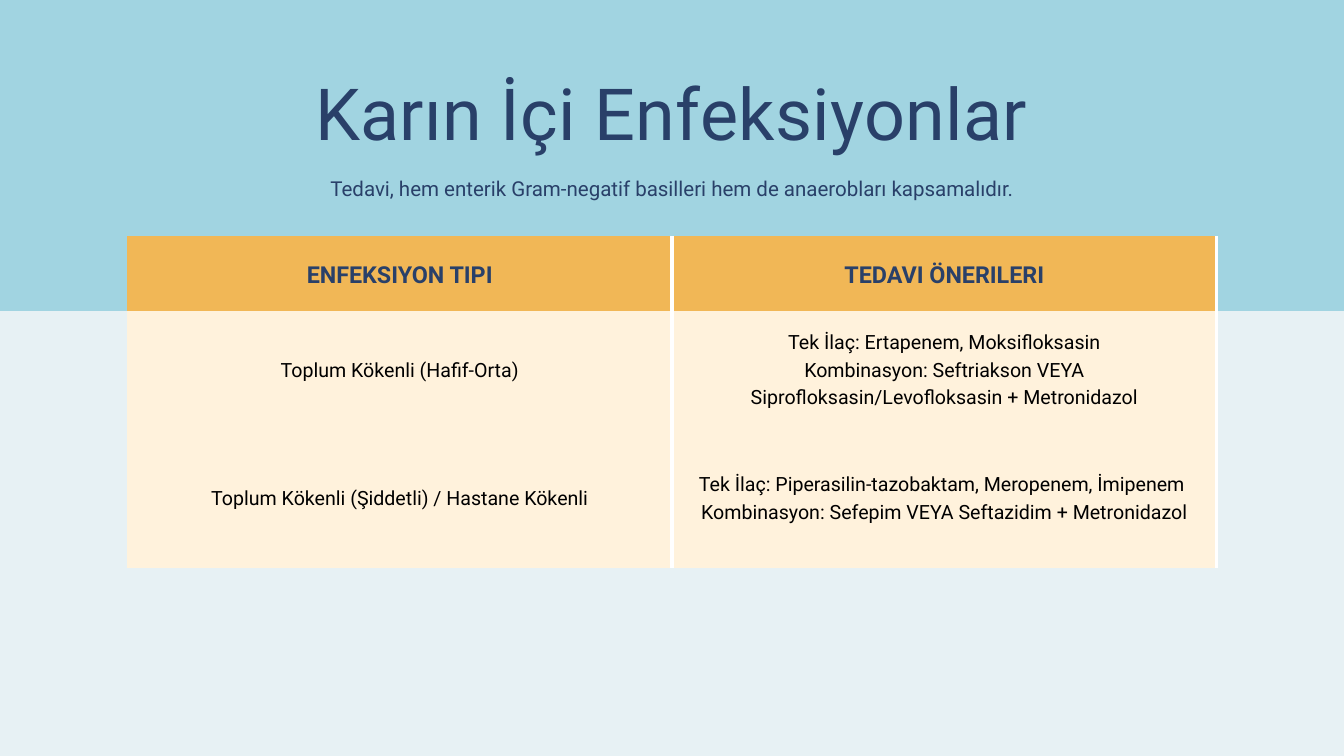
import pptx
import pptx.dml.color
import pptx.enum.shapes
import pptx.enum.text
import pptx.oxml
import pptx.oxml.ns
import pptx.util

NAVY = "294069"
BLACK = "000000"
WHITE = "FFFFFF"
SKY = "A1D4E1"
PALE_BLUE = "E7F1F4"
ORANGE = "F1B756"
CREAM = "FFF2DC"

SLIDE_WIDTH, SLIDE_HEIGHT = 1920, 1080
TABLE_LEFT, TABLE_TOP = 182, 337
COLUMN_WIDTH = 778
ROW_HEIGHTS = [107, 164, 203]
BAND_HEIGHT = TABLE_TOP + ROW_HEIGHTS[0]

TREATMENTS = [
    ["ENFEKSIYON TIPI", "TEDAVI ÖNERILERI"],
    ["Toplum Kökenli (Hafif-Orta)",
     "Tek İlaç: Ertapenem, Moksifloksasin\n"
     "Kombinasyon: Seftriakson VEYA Siprofloksasin/Levofloksasin + Metronidazol"],
    ["Toplum Kökenli (Şiddetli) / Hastane Kökenli",
     "Tek İlaç: Piperasilin-tazobaktam, Meropenem, İmipenem \n"
     "Kombinasyon: Sefepim VEYA Seftazidim + Metronidazol"],
]


def px(length):
    return pptx.util.Emu(length * 9525)


def color(value):
    return pptx.dml.color.RGBColor.from_string(value)


class SlideBuilder:
    font_name = "Roboto"
    border_width = pptx.util.Pt(3.75)

    def __init__(self, slide):
        self.slide = slide

    def background(self, fill):
        self.slide.background.fill.solid()
        self.slide.background.fill.fore_color.rgb = color(fill)

    def band(self, left, top, width, height, fill):
        """Add a plain rectangle behind everything else."""
        shape = self.slide.shapes.add_shape(
            pptx.enum.shapes.MSO_SHAPE.RECTANGLE,
            px(left), px(top), px(width), px(height))
        shape.shadow.inherit = False
        shape.fill.solid()
        shape.fill.fore_color.rgb = color(fill)
        shape.line.fill.background()
        self.slide.shapes[0].element.addprevious(shape.element)

    def format_text(self, frame, text, size, line_spacing, text_color, bold=False):
        frame.text = text
        frame.word_wrap = True
        for paragraph in frame.paragraphs:
            paragraph.alignment = pptx.enum.text.PP_ALIGN.CENTER
            paragraph.line_spacing = pptx.util.Pt(line_spacing)
            paragraph.space_before = paragraph.space_after = pptx.util.Pt(0)
            paragraph.font.name = self.font_name
            paragraph.font.size = pptx.util.Pt(size)
            paragraph.font.bold = bold
            paragraph.font.color.rgb = color(text_color)

    def placeholder(self, index, left, top, width, height, text, size,
                    line_spacing, tracking=0):
        """Fill a template placeholder; tracking is in hundredths of a point."""
        shape = self.slide.placeholders[index]
        shape.left, shape.top = px(left), px(top)
        shape.width, shape.height = px(width), px(height)
        frame = shape.text_frame
        frame.margin_left = frame.margin_right = 0
        frame.margin_top = frame.margin_bottom = 0
        frame.vertical_anchor = pptx.enum.text.MSO_ANCHOR.TOP
        frame.auto_size = pptx.enum.text.MSO_AUTO_SIZE.NONE
        self.format_text(frame, text, size, line_spacing, NAVY)
        if tracking:
            for run in frame.paragraphs[0].runs:
                run._r.get_or_add_rPr().set("spc", str(tracking))

    def cell_borders(self, cell, white_sides):
        properties = cell._tc.get_or_add_tcPr()
        namespace = pptx.oxml.ns.nsdecls("a")
        for position, side in enumerate("LRTB"):
            if side in white_sides:
                width = self.border_width
                fill = f'<a:solidFill><a:srgbClr val="{WHITE}"/></a:solidFill>'
            else:
                width, fill = 0, "<a:noFill/>"
            border = pptx.oxml.parse_xml(
                f'<a:ln{side} {namespace} w="{width}">{fill}</a:ln{side}>')
            properties.insert(position, border)

    def table(self, left, top, column_width, row_heights, rows):
        column_count = len(rows[0])
        table = self.slide.shapes.add_table(
            len(rows), column_count, px(left), px(top),
            px(column_width * column_count), px(sum(row_heights))).table
        table.first_row = table.horz_banding = False
        for column in table.columns:
            column.width = px(column_width)
        for row_index, texts in enumerate(rows):
            table.rows[row_index].height = px(row_heights[row_index])
            is_header = row_index == 0
            for column_index, text in enumerate(texts):
                cell = table.cell(row_index, column_index)
                cell.fill.solid()
                cell.fill.fore_color.rgb = color(ORANGE if is_header else CREAM)
                cell.margin_left = cell.margin_right = px(20)
                cell.margin_top = cell.margin_bottom = px(20)
                cell.vertical_anchor = pptx.enum.text.MSO_ANCHOR.MIDDLE
                if is_header:
                    self.format_text(cell.text_frame, text, 25, 35, NAVY, bold=True)
                else:
                    self.format_text(cell.text_frame, text, 21, 29.4, BLACK)
                self.cell_borders(cell, "LR" if column_index else "R")


def main():
    presentation = pptx.Presentation()
    presentation.slide_width = px(SLIDE_WIDTH)
    presentation.slide_height = px(SLIDE_HEIGHT)
    builder = SlideBuilder(
        presentation.slides.add_slide(presentation.slide_layouts[0]))

    builder.background(PALE_BLUE)
    builder.band(0, 0, SLIDE_WIDTH, BAND_HEIGHT, SKY)
    builder.table(TABLE_LEFT, TABLE_TOP, COLUMN_WIDTH, ROW_HEIGHTS, TREATMENTS)
    builder.placeholder(0, TABLE_LEFT, 109, 2 * COLUMN_WIDTH, 114,
                        "Karın İçi Enfeksiyonlar", 77, 84.7, tracking=40)
    builder.placeholder(
        1, 393, 252, 1134, 35,
        "Tedavi, hem enterik Gram-negatif basilleri hem de anaerobları kapsamalıdır.",
        22, 26.4)
    presentation.save("out.pptx")


if __name__ == "__main__":
    main()
